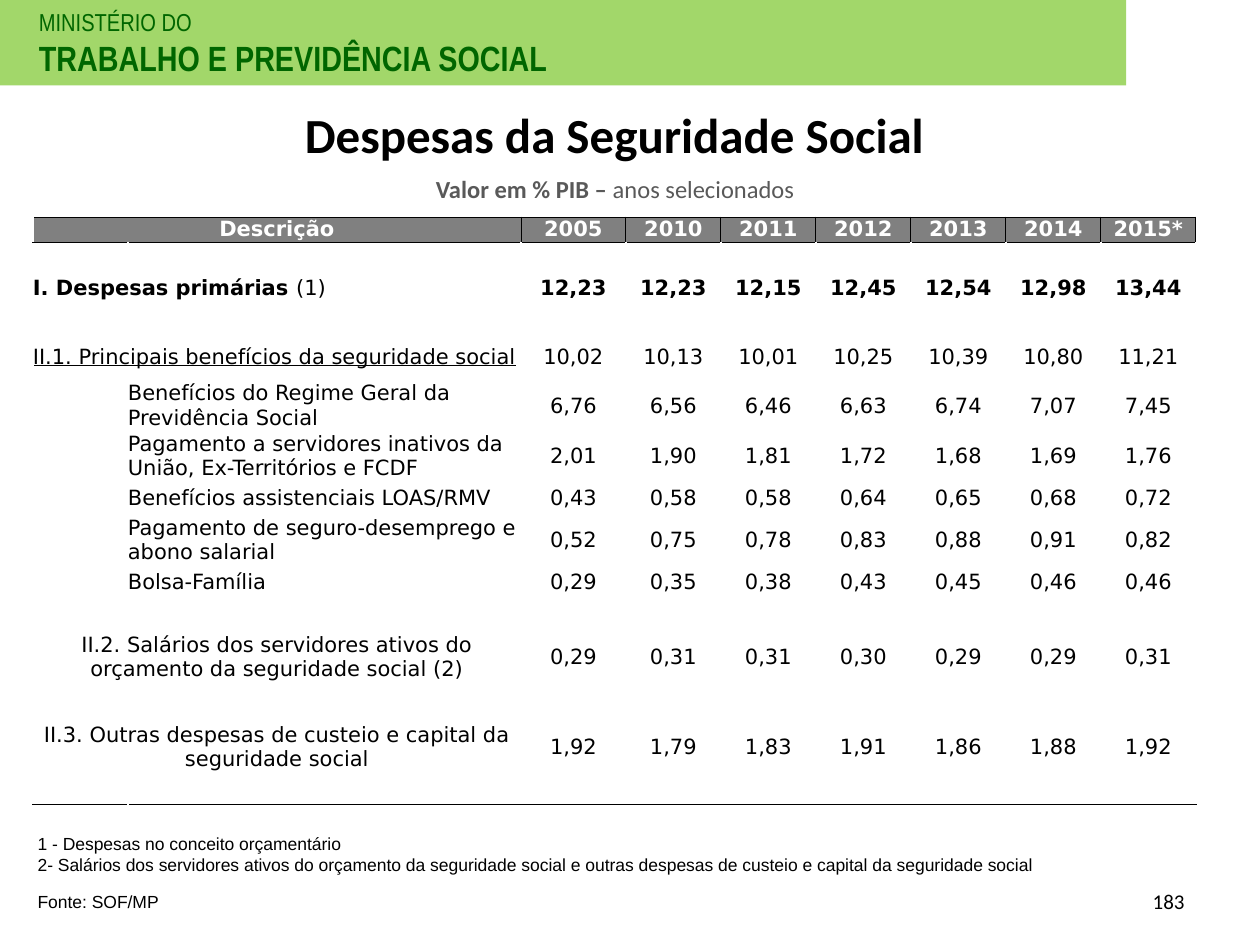
from dataclasses import dataclass

from lxml import etree
from pptx import Presentation
from pptx.dml.color import RGBColor
from pptx.enum import shapes, text
from pptx.oxml import ns
from pptx.util import Pt

BLACK, WHITE, GREY, GREEN = "000000", "FFFFFF", "808080", "006600"
LEFT, CENTER, RIGHT = text.PP_ALIGN.LEFT, text.PP_ALIGN.CENTER, text.PP_ALIGN.RIGHT
MIDDLE, TOP = text.MSO_ANCHOR.MIDDLE, text.MSO_ANCHOR.TOP
COLUMNS = [54.3, 224.6, 60] + [54.3] * 6


@dataclass
class Run:
    text: str
    bold: bool = False
    size: float | None = None


@dataclass
class Box:
    left: float
    top: float
    width: float
    height: float
    lines: list[list[Run]]
    size: float
    font: str
    color: str = BLACK
    align: text.PP_ALIGN = LEFT
    anchor: text.MSO_ANCHOR = TOP


@dataclass
class Row:
    height: float
    label: list[Run] | None = None
    values: str = ""
    align: text.PP_ALIGN = LEFT
    sub: bool = False
    bold: bool = False
    underline: bool = False
    color: str = BLACK
    fill: str | None = None


BOXES = [
    Box(15.1, 0.7, 414, 48, [[Run("MINISTÉRIO DO", size=14)],
                             [Run("TRABALHO E PREVIDÊNCIA SOCIAL", True, 20)]],
        14, "Arial Narrow", GREEN),
    Box(516, 500.4, 168, 28.8, [[Run("183")]], 12, "Calibri", BLACK, RIGHT, MIDDLE),
    Box(224, 95.8, 255, 24.5, [[Run("Valor em % PIB – ", True), Run("anos selecionados")]],
        14, "Calibri", "595959", CENTER),
    Box(14.4, 505.4, 119, 19.4, [[Run("Fonte: SOF/MP")]], 10, "Arial"),
    Box(14.4, 472.3, 608, 32.4,
        [[Run("1 - Despesas no conceito orçamentário")],
         [Run("2- Salários dos servidores ativos do orçamento da seguridade social "
              "e outras despesas de custeio e capital da seguridade social")]],
        10, "Arial"),
]
TITLE = Box(160, 41.8, 382, 69, [[Run("Despesas da Seguridade Social", True)]],
            28, "Calibri", BLACK, CENTER, MIDDLE)

ROWS = [
    Row(14.5, [Run("Descrição", True)], "2005 2010 2011 2012 2013 2014 2015*",
        CENTER, bold=True, color=WHITE, fill=GREY),
    Row(18.8),
    Row(14.5, [Run("I. Despesas primárias ", True), Run("(1)")],
        "12,23 12,23 12,15 12,45 12,54 12,98 13,44", bold=True),
    Row(18.8),
    Row(27, [Run("II.1. Principais benefícios da seguridade social")],
        "10,02 10,13 10,01 10,25 10,39 10,80 11,21", underline=True),
    Row(28.3, [Run("Benefícios do Regime Geral da Previdência Social")],
        "6,76 6,56 6,46 6,63 6,74 7,07 7,45", sub=True),
    Row(28.3, [Run("Pagamento a servidores inativos da União, Ex-Territórios e FCDF")],
        "2,01 1,90 1,81 1,72 1,68 1,69 1,76", sub=True),
    Row(19.2, [Run("Benefícios assistenciais LOAS/RMV")],
        "0,43 0,58 0,58 0,64 0,65 0,68 0,72", sub=True),
    Row(28.3, [Run("Pagamento de seguro-desemprego e abono salarial")],
        "0,52 0,75 0,78 0,83 0,88 0,91 0,82", sub=True),
    Row(19.2, [Run("Bolsa-Família")],
        "0,29 0,35 0,38 0,43 0,45 0,46 0,46", sub=True),
    Row(18.8),
    Row(28.3, [Run("II.2. Salários dos servidores ativos do orçamento da seguridade social (2)")],
        "0,29 0,31 0,31 0,30 0,29 0,29 0,31", CENTER),
    Row(18.8),
    Row(36.5, [Run("II.3. Outras despesas de custeio e capital da seguridade social")],
        "1,92 1,79 1,83 1,91 1,86 1,88 1,92", CENTER),
    Row(14.5),
]


def rgb(value: str) -> RGBColor:
    return RGBColor.from_string(value)


def write(p, runs: list[Run], size: float, font: str, color: str, align) -> None:
    p.alignment = align
    p.font.size, p.font.name = Pt(size), font
    p.font.color.rgb = rgb(color)
    for item in runs:
        r = p.add_run()
        r.text = item.text
        r.font.bold = item.bold
        if item.size:
            r.font.size = Pt(item.size)


def fill_box(sp, box: Box) -> None:
    sp.left, sp.top = Pt(box.left), Pt(box.top)
    sp.width, sp.height = Pt(box.width), Pt(box.height)
    tf = sp.text_frame
    tf.word_wrap = True
    tf.vertical_anchor = box.anchor
    for i, line in enumerate(box.lines):
        p = tf.paragraphs[0] if i == 0 else tf.add_paragraph()
        write(p, line, box.size, box.font, box.color, box.align)


def add_band(s) -> None:
    sp = s.shapes.add_shape(shapes.MSO_SHAPE.RECTANGLE, 0, 0, Pt(643.5), Pt(48.8))
    sp.shadow.inherit = False
    sp.line.fill.background()
    sp.fill.solid()
    sp.fill.fore_color.rgb = rgb("92D050")
    color = sp.fill._xPr.find(".//" + ns.qn("a:srgbClr"))
    etree.SubElement(color, ns.qn("a:alpha"), val="85000")


def add_borders(cell, sides: str) -> None:
    for side in sides:
        ln = etree.SubElement(cell._tc.get_or_add_tcPr(), ns.qn(f"a:ln{side}"), w="6350")
        fill = etree.SubElement(ln, ns.qn("a:solidFill"))
        etree.SubElement(fill, ns.qn("a:srgbClr"), val=BLACK)


def fill_row(table, i: int, row: Row) -> None:
    cells = [table.cell(i, j) for j in range(len(COLUMNS))]
    label_at = 1 if row.sub else 0
    if row.label and not row.sub:
        cells[0].merge(cells[1])
    contents = {}
    if row.label:
        contents = {j: [Run(v, row.bold)] for j, v in enumerate(row.values.split(), 2)}
        contents[label_at] = row.label
    for j, cell in enumerate(cells):
        cell.margin_left = cell.margin_right = cell.margin_top = cell.margin_bottom = 0
        cell.vertical_anchor = MIDDLE
        if i == 0:
            add_borders(cell, "RTB" if j < 2 else "LRTB")
        elif i == 1:
            add_borders(cell, "T")
        elif i == len(ROWS) - 1:
            add_borders(cell, "B")
        if row.fill:
            cell.fill.solid()
            cell.fill.fore_color.rgb = rgb(row.fill)
        else:
            cell.fill.background()
        p = cell.text_frame.paragraphs[0]
        if j in contents:
            align = row.align if j == label_at else CENTER
            write(p, contents[j], 12, "DejaVu Sans", row.color, align)
            if row.underline and j == label_at:
                p.runs[0].font.underline = True
        else:
            p.font.size = Pt(6)
            p._p.get_or_add_endParaRPr().set("sz", "600")


def add_expenses(s) -> None:
    frame = s.shapes.add_table(len(ROWS), len(COLUMNS), Pt(18.8), Pt(124),
                               Pt(sum(COLUMNS)), Pt(sum(r.height for r in ROWS)))
    table = frame.table
    table.first_row = table.horz_banding = False
    for column, width in zip(table.columns, COLUMNS):
        column.width = Pt(width)
    for i, row in enumerate(ROWS):
        table.rows[i].height = Pt(row.height)
        fill_row(table, i, row)


def main() -> None:
    prs = Presentation()
    prs.slide_width, prs.slide_height = Pt(720), Pt(540)
    s = prs.slides.add_slide(prs.slide_layouts[5])
    add_band(s)
    fill_box(s.shapes.title, TITLE)
    for box in BOXES:
        fill_box(s.shapes.add_textbox(0, 0, 0, 0), box)
    add_expenses(s)
    prs.save("out.pptx")


if __name__ == "__main__":
    main()
